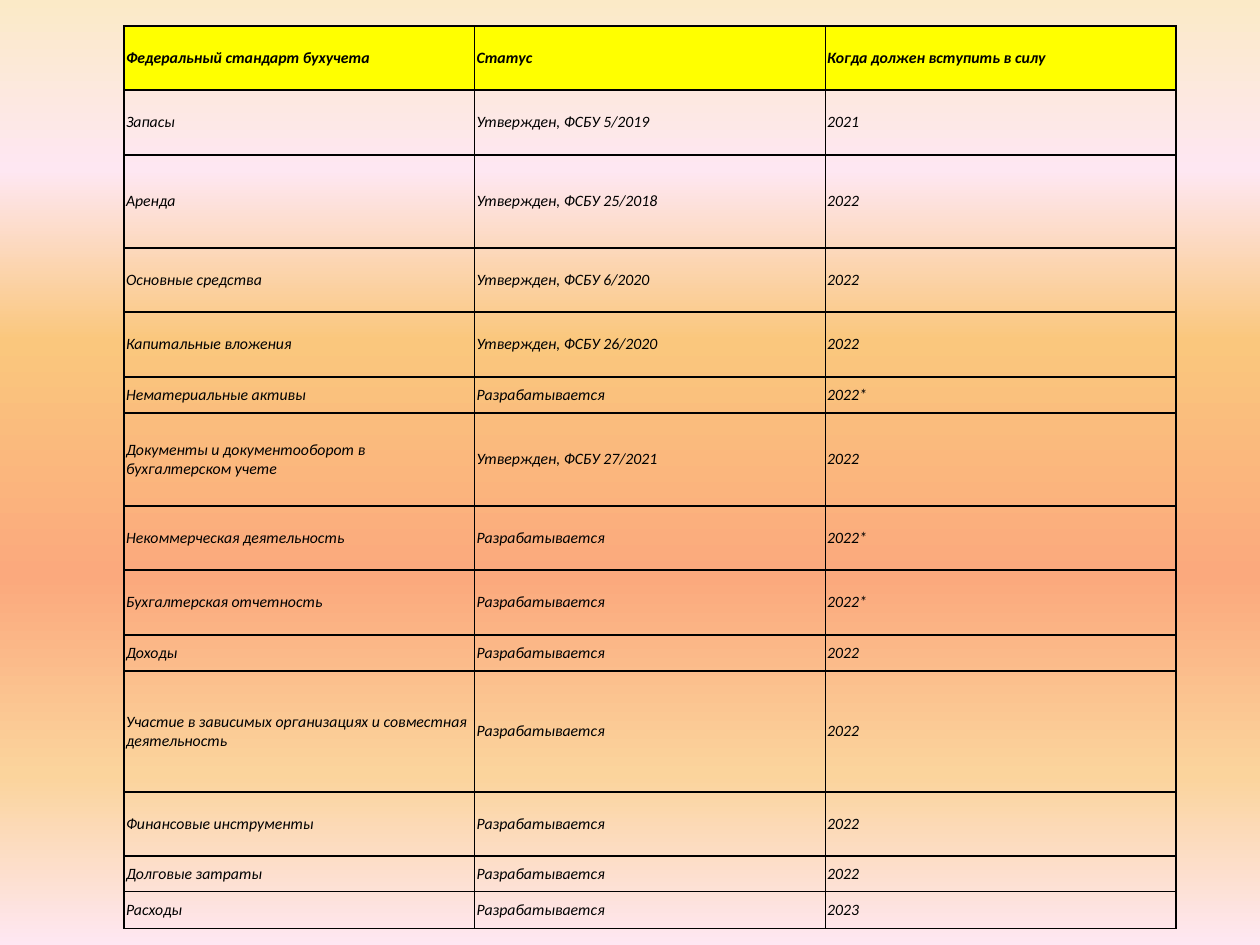
from itertools import pairwise

from lxml import etree
from pptx import Presentation
from pptx.dml.color import RGBColor
from pptx.enum.text import MSO_ANCHOR
from pptx.oxml.ns import qn
from pptx.util import Pt

MIDDLE = MSO_ANCHOR.MIDDLE
PX = 914400 // 126
FONT = "Calibri"
COLORS = {
    "ink": "000000",
    "header": "FFFF00",
    "cream": "FBEAC7",
    "pink": "FEE7F2",
    "amber": "FAC77D",
    "coral": "FBA97D",
    "sand": "FBD49C",
}
BACKGROUND = [(0, "cream"), (18, "pink"), (36, "amber"),
              (61, "coral"), (82, "sand"), (100, "pink")]
DRAFT = "Разрабатывается"
ROWS = [
    ("Федеральный стандарт бухучета", "Статус", "Когда должен вступить в силу"),
    ("Запасы", "Утвержден, ФСБУ 5/2019", "2021"),
    ("Аренда", "Утвержден, ФСБУ 25/2018", "2022"),
    ("Основные средства", "Утвержден, ФСБУ 6/2020", "2022"),
    ("Капитальные вложения", "Утвержден, ФСБУ 26/2020", "2022"),
    ("Нематериальные активы", DRAFT, "2022*"),
    ("Документы и документооборот в бухгалтерском учете", "Утвержден, ФСБУ 27/2021", "2022"),
    ("Некоммерческая деятельность", DRAFT, "2022*"),
    ("Бухгалтерская отчетность", DRAFT, "2022*"),
    ("Доходы", DRAFT, "2022"),
    ("Участие в зависимых организациях и совместная деятельность", DRAFT, "2022"),
    ("Финансовые инструменты", DRAFT, "2022"),
    ("Долговые затраты", DRAFT, "2022"),
    ("Расходы", DRAFT, "2023"),
]
ROW_EDGES = [0, 64, 129, 222, 286, 351, 387, 480, 544, 609, 645, 766, 830, 866, 903]


def paint_background(slide, stops):
    fill = slide.background.fill
    fill.gradient()
    fill.gradient_angle = 270
    stop_list = next(slide.element.iter(qn("a:gsLst")))
    for old in list(stop_list):
        stop_list.remove(old)
    for percent, name in stops:
        stop = etree.SubElement(stop_list, qn("a:gs"), pos=str(percent * 1000))
        etree.SubElement(stop, qn("a:srgbClr"), val=COLORS[name])


def add_borders(cell):
    props = cell._tc.get_or_add_tcPr()
    for i, side in enumerate(("lnL", "lnR", "lnT", "lnB")):
        line = etree.Element(qn(f"a:{side}"), w=str(Pt(1)))
        fill = etree.SubElement(line, qn("a:solidFill"))
        etree.SubElement(fill, qn("a:srgbClr"), val=COLORS["ink"])
        props.insert(i, line)


def fill_cell(cell, text, is_header):
    cell.vertical_anchor = MIDDLE
    cell.margin_left = cell.margin_right = 2 * PX
    cell.margin_top = cell.margin_bottom = 2 * PX
    if is_header:
        cell.fill.solid()
        cell.fill.fore_color.rgb = RGBColor.from_string(COLORS["header"])
    else:
        cell.fill.background()
    add_borders(cell)
    cell.text_frame.text = text
    font = cell.text_frame.paragraphs[0].runs[0].font
    font.name = FONT
    font.size = Pt(9)
    font.bold = is_header
    font.italic = True
    font.color.rgb = RGBColor.from_string(COLORS["ink"])


def add_standards_table(slide, x, y, w, h):
    cols = len(ROWS[0])
    table = slide.shapes.add_table(len(ROWS), cols, x * PX, y * PX, w * PX, h * PX).table
    table.first_row = False
    table.horz_banding = False
    for col in table.columns:
        col.width = w * PX // cols
    for row, (top, bottom) in zip(table.rows, pairwise(ROW_EDGES)):
        row.height = (bottom - top) * PX
    for i, texts in enumerate(ROWS):
        for j, text in enumerate(texts):
            fill_cell(table.cell(i, j), text, i == 0)


def main():
    prs = Presentation()
    prs.slide_width = 1260 * PX
    prs.slide_height = 945 * PX
    slide = prs.slides.add_slide(prs.slide_layouts[6])
    paint_background(slide, BACKGROUND)
    add_standards_table(slide, 124, 26, 1052, ROW_EDGES[-1])
    prs.save("out.pptx")


if __name__ == "__main__":
    main()
